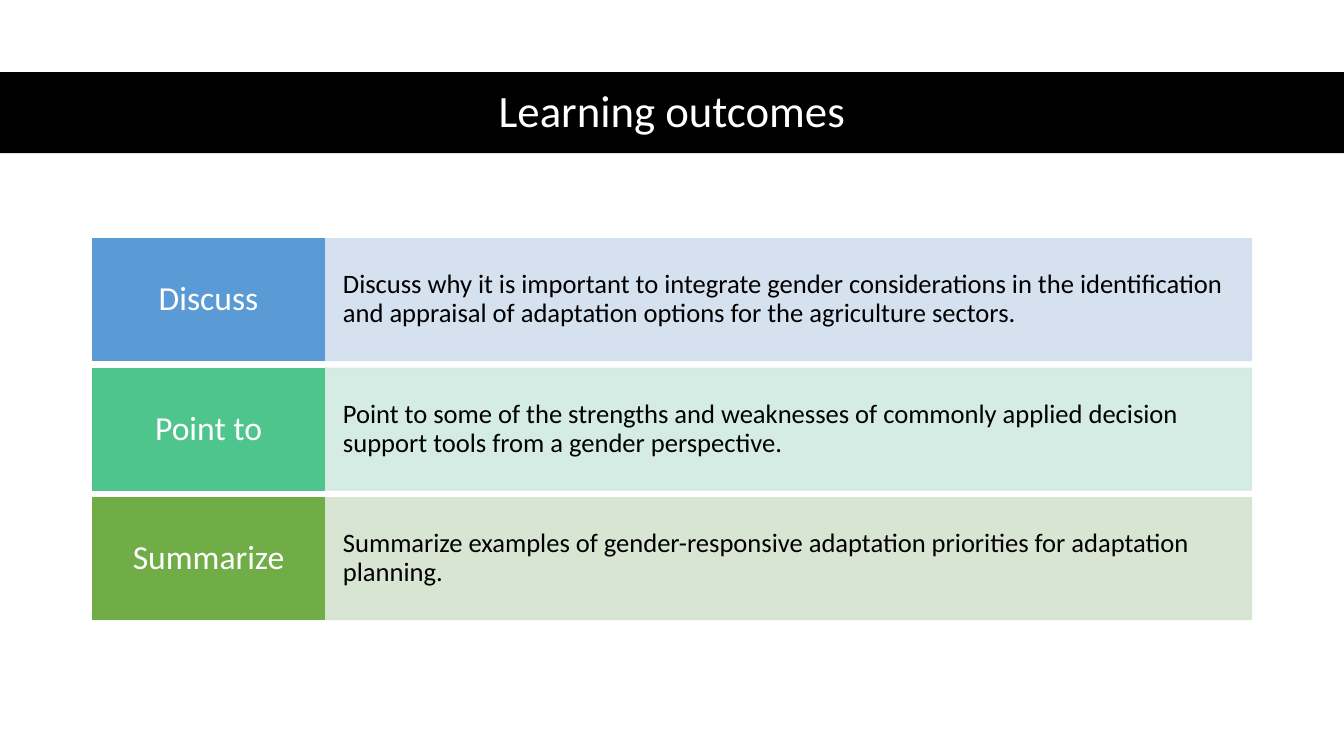
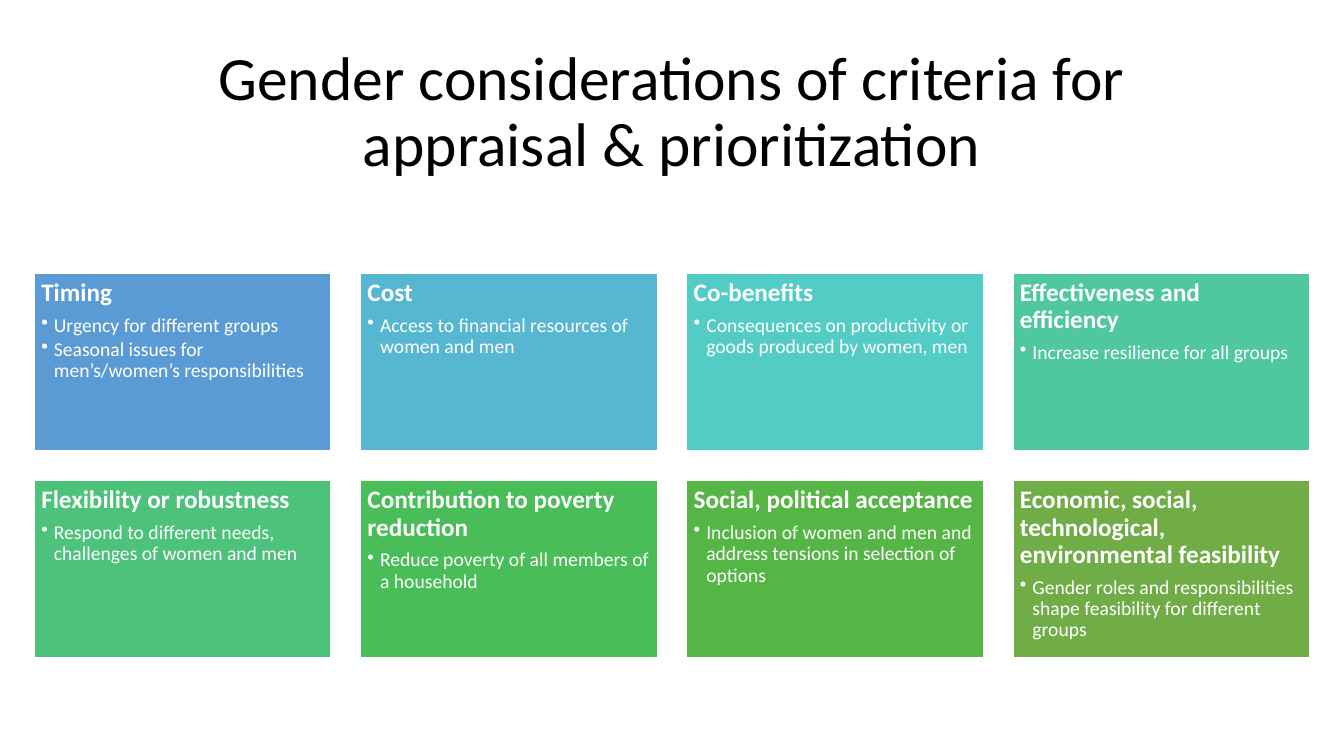
import lxml.etree
import pptx
import pptx.dml.color
import pptx.enum.shapes
import pptx.enum.text
import pptx.oxml.ns
import pptx.util

Pt = pptx.util.Pt
Color = pptx.dml.color.RGBColor
Align = pptx.enum.text.PP_ALIGN
Anchor = pptx.enum.text.MSO_ANCHOR

FONT = "Calibri"
BLACK = Color(0x00, 0x00, 0x00)
WHITE = Color(0xFF, 0xFF, 0xFF)
BLUE = Color(0x5B, 0x9B, 0xD5)
SKY = Color(0x57, 0xB7, 0xD1)
TURQUOISE = Color(0x53, 0xCC, 0xC5)
TEAL = Color(0x4F, 0xC7, 0xA0)
MINT = Color(0x4D, 0xC5, 0x8D)
JADE = Color(0x4C, 0xC2, 0x7B)
EMERALD = Color(0x48, 0xBD, 0x58)
GREEN = Color(0x55, 0xB6, 0x46)
OLIVE = Color(0x70, 0xAD, 0x47)
PALE_BLUE = Color(0xD2, 0xDE, 0xEF)
PALE_MINT = Color(0xD0, 0xEA, 0xE1)
PALE_OLIVE = Color(0xD5, 0xE3, 0xCF)

SLIDE_WIDTH, SLIDE_HEIGHT = 960, 540
MARGIN = 66

OUTCOMES_TITLE = "Learning outcomes"
OUTCOMES = [
    ("Discuss", "Discuss why it is important to integrate gender considerations in the "
     "identification and appraisal of adaptation options for the agriculture sectors.",
     BLUE, PALE_BLUE),
    ("Point to", "Point to some of the strengths and weaknesses of commonly applied "
     "decision support tools from a gender perspective.", MINT, PALE_MINT),
    ("Summarize", "Summarize examples of gender-responsive adaptation priorities for "
     "adaptation planning.", OLIVE, PALE_OLIVE),
]

CRITERIA_TITLE = "Gender considerations of criteria for appraisal & prioritization"
CRITERIA = [
    ("Timing", ["Urgency for different groups",
                "Seasonal issues for men’s/women’s responsibilities"], BLUE),
    ("Cost", ["Access to financial resources of women and men"], SKY),
    ("Co-benefits", ["Consequences on productivity or goods produced by women, men"],
     TURQUOISE),
    ("Effectiveness and efficiency", ["Increase resilience for all groups"], TEAL),
    ("Flexibility or robustness",
     ["Respond to different needs, challenges of women and men"], JADE),
    ("Contribution to poverty reduction",
     ["Reduce poverty of all members of a household"], EMERALD),
    ("Social, political acceptance",
     ["Inclusion of women and men and address tensions in selection of options"], GREEN),
    ("Economic, social, technological, environmental feasibility",
     ["Gender roles and responsibilities shape feasibility for different groups"], OLIVE),
]


def write(para, text, size, color, bold=False, align=Align.LEFT, after=0, bullet=False):
    para.alignment = align
    para.line_spacing = 0.9
    para.space_before = Pt(0)
    para.space_after = Pt(after)
    span = para.add_run()
    span.text = text
    span.font.name = FONT
    span.font.size = Pt(size)
    span.font.bold = bold
    span.font.color.rgb = color
    if bullet:
        properties = para._p.get_or_add_pPr()
        properties.set("marL", str(Pt(9)))
        properties.set("indent", str(-Pt(9)))
        mark = lxml.etree.SubElement(properties, pptx.oxml.ns.qn("a:buChar"))
        mark.set("char", "•")


def set_opacity(fill_parent, percent):
    for color in fill_parent.iter(pptx.oxml.ns.qn("a:srgbClr")):
        alpha = lxml.etree.SubElement(color, pptx.oxml.ns.qn("a:alpha"))
        alpha.set("val", str(percent * 1000))


def add_box(slide, left, top, width, height, fill, line=None, inset=(0, 0),
            anchor=Anchor.MIDDLE, opacity=100):
    box = slide.shapes.add_shape(pptx.enum.shapes.MSO_SHAPE.RECTANGLE,
                                 Pt(left), Pt(top), Pt(width), Pt(height))
    box.shadow.inherit = False
    box.fill.solid()
    box.fill.fore_color.rgb = fill
    box.line.color.rgb = line or fill
    box.line.width = Pt(1)
    if opacity < 100:
        set_opacity(box.element.spPr, opacity)
    frame = box.text_frame
    frame.word_wrap = True
    frame.vertical_anchor = anchor
    frame.margin_left = frame.margin_right = Pt(inset[0])
    frame.margin_top = frame.margin_bottom = Pt(inset[1])
    return box


def add_page(deck, title_text, top, height, size, color):
    page = deck.slides.add_slide(deck.slide_layouts[5])
    title = page.shapes.title
    title.left, title.top = Pt(MARGIN), Pt(top)
    title.width, title.height = Pt(SLIDE_WIDTH - 2 * MARGIN), Pt(height)
    title.text_frame.auto_size = pptx.enum.text.MSO_AUTO_SIZE.NONE
    title.text_frame.vertical_anchor = Anchor.MIDDLE
    write(title.text_frame.paragraphs[0], title_text, size, color, align=Align.CENTER)
    return page


def build_outcomes(deck):
    page = add_page(deck, OUTCOMES_TITLE, 53, 56, 32, WHITE)
    band = add_box(page, 0, 51.5, SLIDE_WIDTH, 58, BLACK)
    band.line.fill.background()
    page.shapes.title.element.addprevious(band.element)

    first_top, row_height, row_pitch, label_width = 170.5, 87, 92.5, 166
    text_left = MARGIN + label_width
    text_width = SLIDE_WIDTH - MARGIN - text_left
    for row, (label, text, color, pale) in enumerate(OUTCOMES):
        top = first_top + row * row_pitch
        text_box = add_box(page, text_left, top, text_width, row_height, pale,
                           inset=(13, 22), opacity=90)
        write(text_box.text_frame.paragraphs[0], text, 19, BLACK)
        label_box = add_box(page, MARGIN, top, label_width, row_height, color, inset=(9, 9))
        write(label_box.text_frame.paragraphs[0], label, 24, WHITE, align=Align.CENTER)


def build_criteria(deck):
    page = add_page(deck, CRITERIA_TITLE, 29, 104, 44, BLACK)
    columns, card_width, card_height, gap = 4, 212, 127, 21
    left = (SLIDE_WIDTH - columns * card_width - (columns - 1) * gap) / 2
    for index, (heading, points, color) in enumerate(CRITERIA):
        row, column = divmod(index, columns)
        card = add_box(page, left + column * (card_width + gap),
                       195 + row * (card_height + gap), card_width, card_height,
                       color, line=WHITE, inset=(5, 5), anchor=Anchor.TOP)
        frame = card.text_frame
        write(frame.paragraphs[0], heading, 18, WHITE, bold=True, after=6)
        for point in points:
            write(frame.add_paragraph(), point, 14, WHITE, after=2, bullet=True)


def main():
    deck = pptx.Presentation()
    deck.slide_width, deck.slide_height = Pt(SLIDE_WIDTH), Pt(SLIDE_HEIGHT)
    build_outcomes(deck)
    build_criteria(deck)
    deck.save("out.pptx")


if __name__ == "__main__":
    main()
